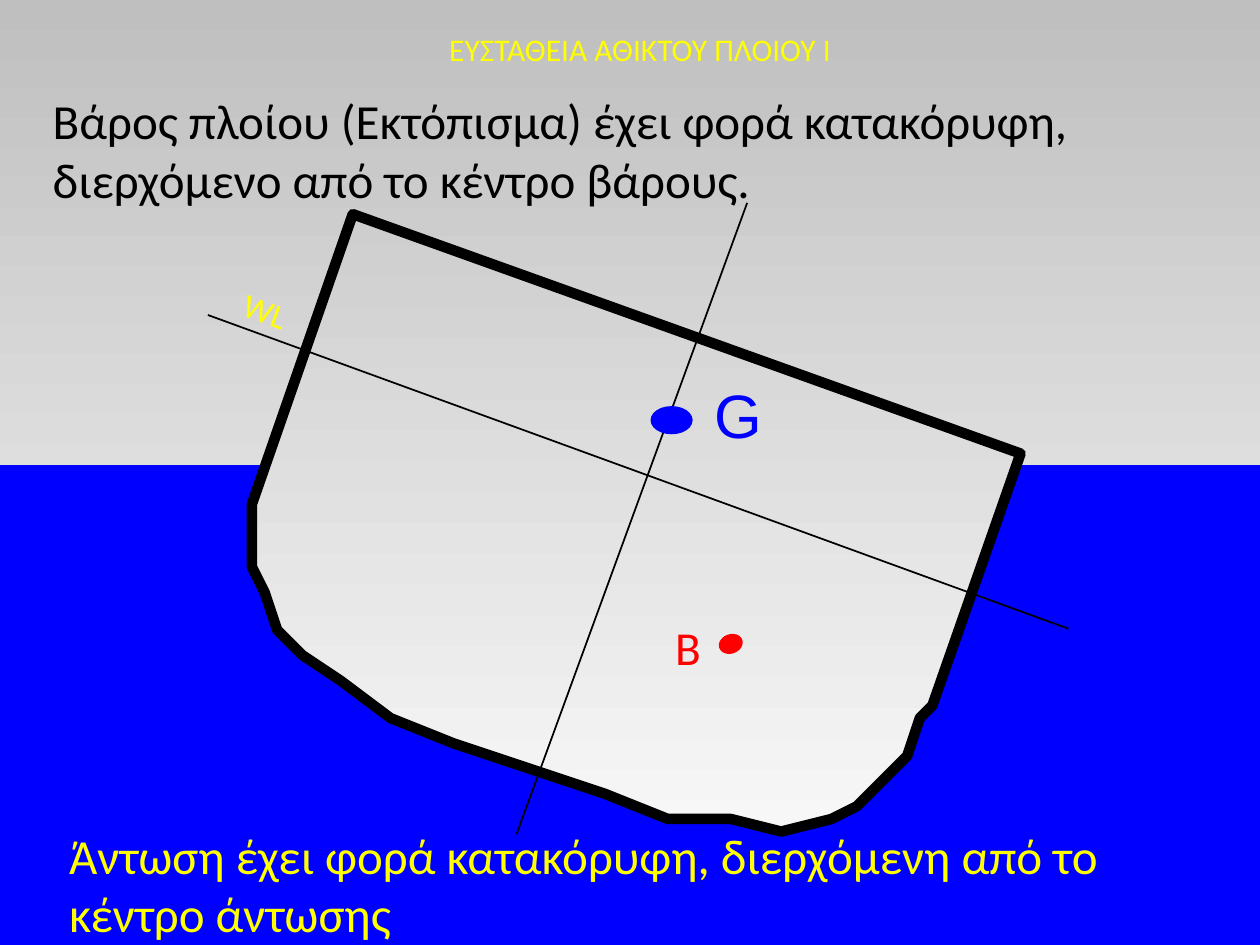
"""Build the slide on intact ship stability: heeled hull, centres G and B, and water."""
from lxml import etree
from pptx import Presentation, util as u
from pptx.dml.color import RGBColor
from pptx.enum import shapes, text
from pptx.oxml.ns import qn

COLUMNS, ROWS = 100, 75
CELL = u.Inches(0.1)
SKY_TOP, SKY_BOTTOM = 0xBF, 0xFF
COLORS = {"yellow": "FFFF00", "water": "0000FF", "ink": "000000", "buoyancy": "FF0000"}
WATER = [(0, 37.2), (0, 75), (100, 75), (100, 37.2)]
HULL = [
    (28.5, 17), (20.2, 39.9), (19.8, 43), (20.1, 44.7), (20.8, 47.3), (22, 49.6),
    (24.2, 52.2), (27.2, 54.4), (31.1, 56.7), (36.5, 59.2), (47.5, 63.2),
    (53.2, 64.6), (57.6, 65.3), (62.1, 65.6), (66, 64.6), (68.2, 63.5),
    (70.4, 61.6), (72, 59.7), (73.2, 57.1), (73.7, 55.6), (80.8, 36.1),
]


def cells(*lengths):
    return [round(length * CELL) for length in lengths]


def rgb(name):
    return RGBColor.from_string(COLORS[name])


def shade_sky(fill, top=0, bottom=ROWS):
    fill.gradient()
    fill.gradient_angle = 270
    for stop, row in zip(fill.gradient_stops, (top, bottom)):
        grey = round(SKY_TOP + (SKY_BOTTOM - SKY_TOP) * row / ROWS)
        stop.color.rgb = RGBColor(grey, grey, grey)


def outline(part, color, width=1):
    part.line.color.rgb = rgb(color)
    part.line.width = u.Pt(width)


def add_outline_shape(slide, points, color, width=1):
    builder = slide.shapes.build_freeform(*points[0], scale=CELL)
    builder.add_line_segments(points[1:], close=True)
    area = builder.convert_to_shape()
    area.shadow.inherit = False
    outline(area, color, width)
    return area


def add_centre(slide, box, color, rotation=0):
    centre = slide.shapes.add_shape(shapes.MSO_SHAPE.OVAL, *cells(*box))
    centre.shadow.inherit = False
    centre.rotation = rotation
    centre.fill.solid()
    centre.fill.fore_color.rgb = rgb(color)
    outline(centre, color)


def add_axis(slide, start, end):
    axis = slide.shapes.add_connector(
        shapes.MSO_CONNECTOR.STRAIGHT, *cells(*start, *end))
    outline(axis, "ink")
    etree.SubElement(axis._element.spPr, qn("a:effectLst"))


def write(frame, words, size, color, font="Calibri"):
    paragraph = frame.paragraphs[0]
    run = paragraph.add_run()
    run.text = words
    run.font.size = u.Pt(size)
    run.font.name = font
    run.font.color.rgb = rgb(color)
    return paragraph


def add_title(slide, words, box):
    title = slide.shapes.title
    title.left, title.top, title.width, title.height = cells(*box)
    frame = title.text_frame
    frame.auto_size = text.MSO_AUTO_SIZE.SHAPE_TO_FIT_TEXT
    frame.vertical_anchor = text.MSO_ANCHOR.MIDDLE
    write(frame, words, 18, "yellow").alignment = text.PP_ALIGN.CENTER


def add_statement(slide, words, box, color):
    frame = slide.shapes.add_textbox(*cells(*box)).text_frame
    frame.word_wrap = True
    frame.auto_size = text.MSO_AUTO_SIZE.SHAPE_TO_FIT_TEXT
    write(frame, words, 28, color)


def add_label(slide, words, box, size, color, font="Calibri",
              anchor=text.MSO_ANCHOR.BOTTOM, rotation=0):
    label = slide.shapes.add_textbox(*cells(*box))
    label.rotation = rotation
    frame = label.text_frame
    frame.word_wrap = False
    frame.auto_size = text.MSO_AUTO_SIZE.SHAPE_TO_FIT_TEXT
    frame.vertical_anchor = anchor
    paragraph = write(frame, words, size, color, font)
    paragraph.line_spacing = 0.85
    paragraph.space_before = u.Pt(round(size * 0.3))


def main():
    deck = Presentation()
    deck.slide_width, deck.slide_height = cells(COLUMNS, ROWS)
    slide = deck.slides.add_slide(deck.slide_layouts.get_by_name("Title Only"))
    shade_sky(slide.background.fill)
    add_title(slide, "ΕΥΣΤΑΘΕΙΑ ΑΘΙΚΤΟΥ ΠΛΟΙΟΥ I", (8.3, 1.9, 85, 4))

    water = add_outline_shape(slide, WATER, "water")
    water.fill.solid()
    water.fill.fore_color.rgb = rgb("water")
    hull = add_outline_shape(slide, HULL, "ink", 6)
    hull_rows = [row for _, row in HULL]
    shade_sky(hull.fill, min(hull_rows), max(hull_rows))

    add_label(slide, "B", (52.6, 49.3, 4.7, 4.8), 27, "buoyancy")
    add_centre(slide, (57.1, 50.4, 1.8, 1.4), "buoyancy", 340)
    add_axis(slide, (59.3, 16.1), (41, 66.2))
    add_axis(slide, (16.5, 25), (84.8, 49.9))
    add_label(slide, "WL", (18.3, 22.9, 5.5, 3.8), 19, "yellow", rotation=20)
    add_centre(slide, (51.7, 32.3, 3.2, 2.1), "water")
    add_label(slide, "G", (55.7, 30.3, 7.3, 6.1), 35, "water", "Arial",
              text.MSO_ANCHOR.MIDDLE)

    add_statement(
        slide, "Άντωση έχει φορά κατακόρυφη, διερχόμενη από το κέντρο άντωσης",
        (4.5, 65, 86.7, 10.4), "yellow")
    add_statement(
        slide, "Βάρος πλοίου (Εκτόπισμα) έχει φορά κατακόρυφη, "
        "διερχόμενο από το κέντρο βάρους.",
        (3.2, 6.7, 98.8, 10.4), "ink")
    deck.save("out.pptx")


if __name__ == "__main__":
    main()
